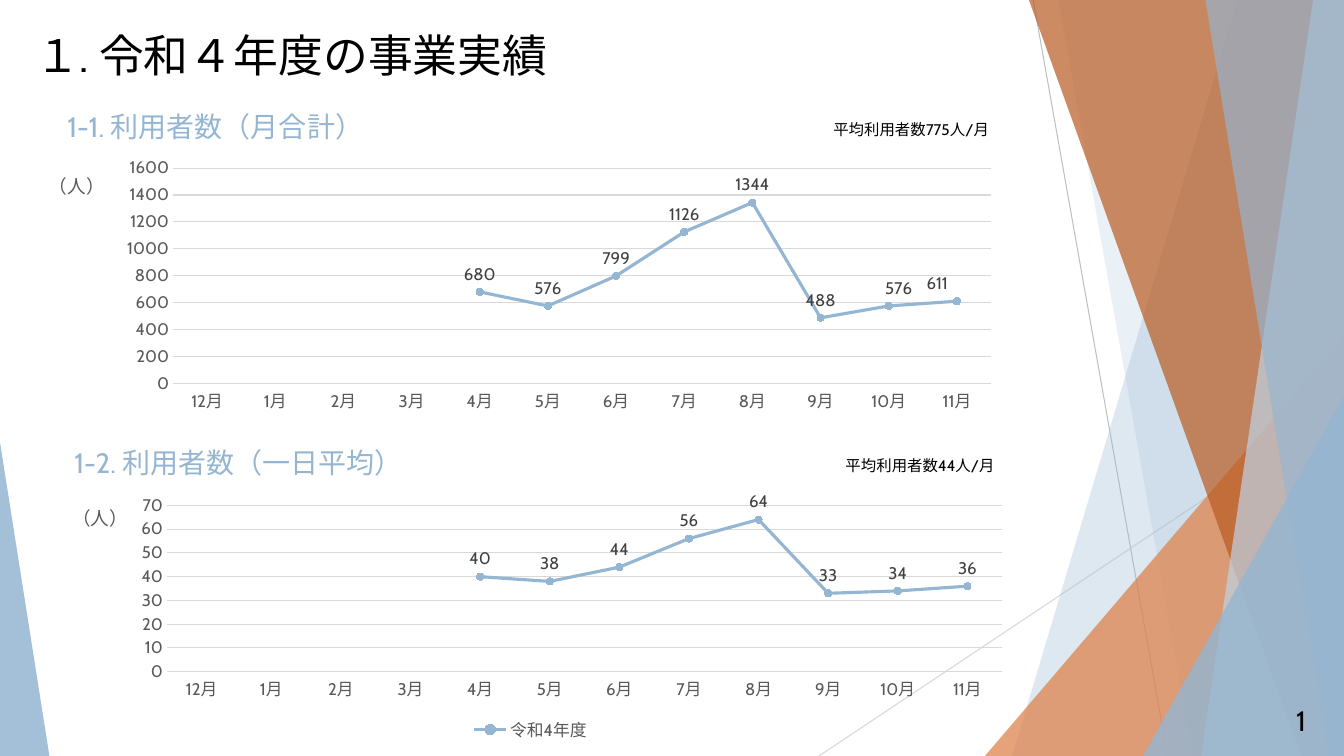
from lxml import etree
from pptx import Presentation
from pptx import util as u
from pptx.chart.data import CategoryChartData
from pptx.dml.color import RGBColor
from pptx.enum import chart as ch, lang, shapes, text
from pptx.oxml.ns import qn

COLORS = {
    "black": "000000", "blue": "94B6D2", "pale_blue": "BFD3E4",
    "orange": "DD8047", "brown": "B95B22", "grid": "D9D9D9",
    "rule": "BFBFBF", "axis": "595959", "value": "404040",
}
WIDTH, HEIGHT = 960, 540
MONTHS = [f"{(month + 11) % 12 or 12}月" for month in range(1, 13)]


def color(name):
    return RGBColor.from_string(COLORS[name])


def format_font(font, size, tint):
    font.size, font.name = u.Pt(size), "Cabin"
    font.color.rgb = color(tint)


def write(frame, words, size=20, tint="black", align=text.PP_ALIGN.LEFT):
    paragraph = frame.paragraphs[0]
    paragraph.alignment = align
    run = paragraph.add_run()
    run.text = words
    format_font(run.font, size, tint)
    run.font.bold = False
    run.font.language_id = lang.MSO_LANGUAGE_ID.JAPANESE


def set_layout(parent, index, **settings):
    layout = parent.find(qn("c:layout"))
    if layout is None:
        layout = etree.Element(qn("c:layout"))
        parent.insert(index, layout)
    for child in list(layout):
        layout.remove(child)
    manual = etree.SubElement(layout, qn("c:manualLayout"))
    for key, value in settings.items():
        etree.SubElement(manual, qn(f"c:{key}")).set("val", str(value))


class UsageSlide:
    def __init__(self, slide):
        self.shapes = slide.shapes

    def line(self, x1, y1, x2, y2, tint):
        rule = self.shapes.add_connector(
            shapes.MSO_CONNECTOR.STRAIGHT, *map(u.Pt, (x1, y1, x2, y2)))
        rule.line.color.rgb = color(tint)
        rule.line.width = u.Pt(0.75)
        etree.SubElement(rule.element.spPr, qn("a:effectLst"))

    def paint(self, facet, tint, opacity):
        facet.shadow.inherit = False
        facet.fill.solid()
        facet.fill.fore_color.rgb = color(tint)
        facet.line.fill.background()
        shade = facet.element.spPr.find(qn("a:solidFill"))[0]
        etree.SubElement(shade, qn("a:alpha")).set("val", str(opacity * 1000))

    def band(self, top_x, bottom_x, tint, opacity):
        builder = self.shapes.build_freeform(u.Pt(top_x), 0)
        corners = [(WIDTH, 0), (WIDTH, HEIGHT), (bottom_x, HEIGHT)]
        builder.add_line_segments([(u.Pt(x), u.Pt(y)) for x, y in corners])
        self.paint(builder.convert_to_shape(), tint, opacity)

    def triangle(self, left, top, width, apex, tint, opacity):
        facet = self.shapes.add_shape(
            shapes.MSO_SHAPE.ISOSCELES_TRIANGLE,
            *map(u.Pt, (left, top, width, HEIGHT - top)))
        facet.adjustments[0] = apex
        self.paint(facet, tint, opacity)

    def label(self, words, left, top, width, height,
              anchor=text.MSO_ANCHOR.MIDDLE, **style):
        box = self.shapes.add_textbox(*map(u.Pt, (left, top, width, height)))
        box.text_frame.word_wrap = True
        box.text_frame.vertical_anchor = anchor
        write(box.text_frame, words, **style)

    def chart(self, name, values, frame, plot, unit, maximum, step,
              nudges=None, legend=False):
        data = CategoryChartData()
        data.categories = MONTHS
        data.add_series(name, [None] * 4 + values)
        chart = self.shapes.add_chart(
            ch.XL_CHART_TYPE.LINE_MARKERS, *map(u.Pt, frame), data).chart
        format_font(chart.font, 10, "black")
        chart.has_title = False
        chart.has_legend = legend
        if legend:
            chart.legend.position = ch.XL_LEGEND_POSITION.BOTTOM
            chart.legend.include_in_layout = False
            format_font(chart.legend.font, 12, "axis")
        x, y, w, h = plot
        set_layout(chart.element.find(".//" + qn("c:plotArea")), 0,
                   layoutTarget="inner", xMode="edge", yMode="edge",
                   x=x, y=y, w=w, h=h)
        self.axes(chart, unit, maximum, step)
        self.series(chart.plots[0], nudges or {})

    def axes(self, chart, unit, maximum, step):
        months, people = chart.category_axis, chart.value_axis
        for axis in (months, people):
            axis.major_tick_mark = ch.XL_TICK_MARK.NONE
            axis.minor_tick_mark = ch.XL_TICK_MARK.NONE
            format_font(axis.tick_labels.font, 12, "axis")
        people.minimum_scale, people.maximum_scale = 0, maximum
        people.major_unit = step
        people.format.line.fill.background()
        for rule in (months.format.line, people.major_gridlines.format.line):
            rule.color.rgb = color("grid")
            rule.width = u.Pt(0.75)
        frame = people.axis_title.text_frame
        write(frame, "（人）", size=13.3, tint="axis")
        body = people.axis_title.element.find(".//" + qn("a:bodyPr"))
        body.set("rot", "0")
        body.set("vert", "horz")
        set_layout(people.axis_title.element, 1, xMode="edge", yMode="edge",
                   x=unit[0], y=unit[1])

    def series(self, plot, nudges):
        plot.vary_by_categories = False
        users = plot.series[0]
        users.smooth = False
        users.format.line.color.rgb = color("blue")
        users.format.line.width = u.Pt(2.25)
        users.marker.style = ch.XL_MARKER_STYLE.CIRCLE
        users.marker.size = 5
        users.marker.format.fill.solid()
        users.marker.format.fill.fore_color.rgb = color("blue")
        users.marker.format.line.color.rgb = color("blue")
        labels = users.data_labels
        labels.show_value = True
        labels.position = ch.XL_LABEL_POSITION.ABOVE
        format_font(labels.font, 12, "value")
        for index, shift in nudges.items():
            point_label = users.points[index].data_label
            point_label.position = ch.XL_LABEL_POSITION.ABOVE
            format_font(point_label.font, 12, "value")
        for point in plot.series[0].data_labels._element.findall(qn("c:dLbl")):
            shift = nudges[int(point.find(qn("c:idx")).get("val"))]
            set_layout(point, 1, x=shift, y=0)


def main():
    deck = Presentation()
    deck.slide_width, deck.slide_height = u.Pt(WIDTH), u.Pt(HEIGHT)
    usage = UsageSlide(deck.slides.add_slide(deck.slide_layouts[6]))

    usage.line(738, 0, 834, HEIGHT, "rule")
    usage.line(WIDTH, 290, 585, HEIGHT, "grid")
    usage.band(884, 723, "blue", 30)
    usage.band(756, 852, "blue", 20)
    usage.triangle(703.5, 240, 256.5, 1, "orange", 72)
    usage.band(735, 929.5, "brown", 70)
    usage.band(938, 858, "pale_blue", 70)
    usage.band(861, 949, "blue", 65)
    usage.triangle(816.5, 283, 143.5, 1, "blue", 80)
    usage.triangle(0, 316, 35.3, 0, "blue", 85)

    usage.label("１. 令和４年度の事業実績", 18, 16, 828, 57.6,
                anchor=text.MSO_ANCHOR.TOP, size=32)
    sections = [
        ("1-1. 利用者数（月合計）", "平均利用者数775人/月", 41, 72, 713.5),
        ("1-2. 利用者数（一日平均）", "平均利用者数44人/月", 46, 312, 717.5),
    ]
    for heading, average, left, top, right in sections:
        usage.label(heading, left, top, 400, 36.7, tint="blue")
        usage.label(average, right - 200, top + 2, 200, 36.7, size=11,
                    align=text.PP_ALIGN.RIGHT)

    usage.chart("Series 1", [680, 576, 799, 1126, 1344, 488, 576, 611],
                (18, 108.7, 704, 190), (0.15, 0.06, 0.83, 0.81),
                (0.02, 0.05), 1600, 200, nudges={10: 0.01, 11: -0.02})
    usage.chart("令和4年度", [40, 38, 44, 56, 64, 33, 34, 36],
                (28, 350, 702, 183), (0.13, 0.06, 0.85, 0.65),
                (0.03, 0.03), 70, 10, legend=True)
    usage.label("1", 918.7, 499, 41, 31.7)
    deck.save("out.pptx")


if __name__ == "__main__":
    main()
